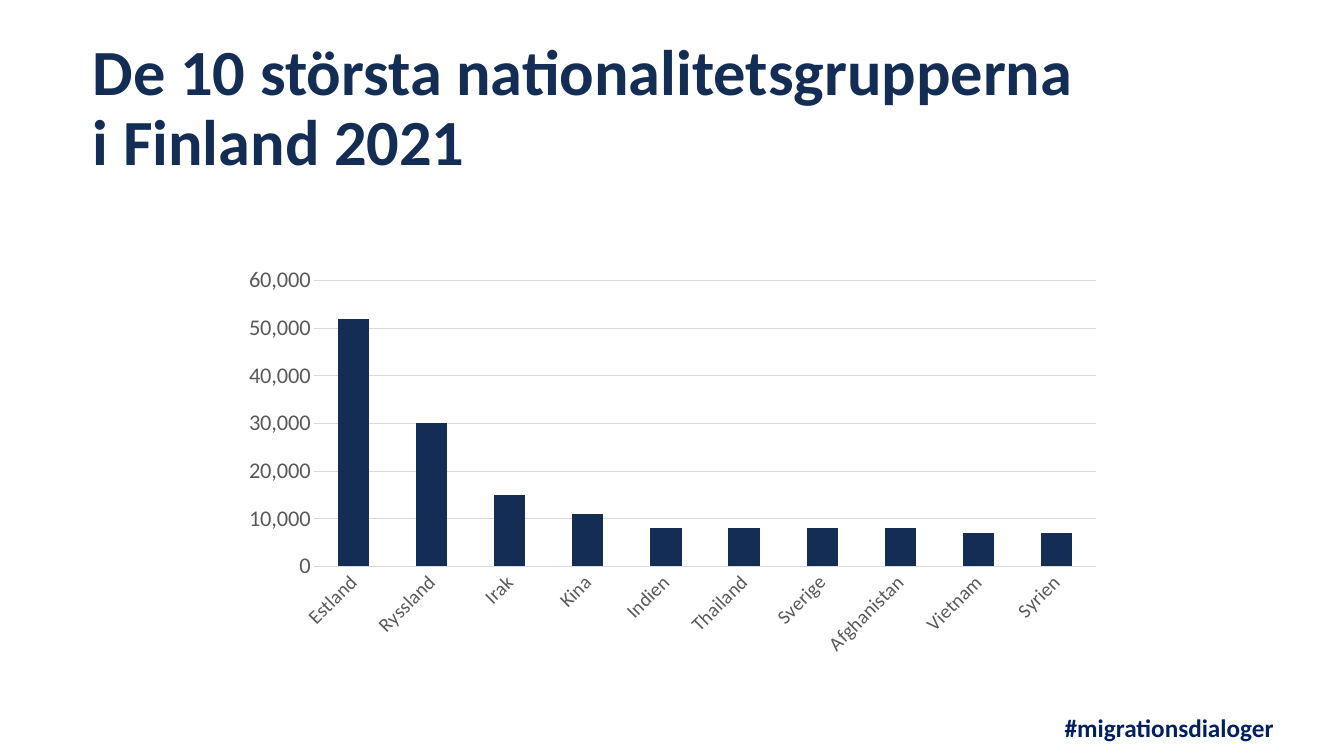
"""Build a slide with a column chart of the largest nationality groups in Finland."""
from lxml import etree
from pptx import Presentation
from pptx.chart.data import CategoryChartData
from pptx.dml.color import RGBColor
from pptx.enum import chart as chart_enum, text as text_enum
from pptx.oxml.ns import qn
from pptx.util import Inches, Pt

TITLE = "De 10 största nationalitetsgrupperna\vi Finland 2021"
HASHTAG = "#migrationsdialoger"
GROUPS = {
    "Estland": 52000,
    "Ryssland": 30000,
    "Irak": 15000,
    "Kina": 11000,
    "Indien": 8000,
    "Thailand": 8000,
    "Sverige": 8000,
    "Afghanistan": 8000,
    "Vietnam": 7000,
    "Syrien": 7000,
}
COLORS = {"navy": "142D55", "hashtag": "002060", "label": "595959", "grid": "D9D9D9", "black": "000000"}
FONT = "Calibri"
LEFT, WIDTH = 0.92, 10.47
PLOT = {"x": 0.21, "y": 0.11, "w": 0.74, "h": 0.66}


def color(name):
    return RGBColor.from_string(COLORS[name])


def style_font(font, size, color_name, bold=False):
    font.name = FONT
    font.size = Pt(size)
    font.bold = bold
    font.color.rgb = color(color_name)


def place(shape, left, top, width, height):
    shape.left, shape.top = Inches(left), Inches(top)
    shape.width, shape.height = Inches(width), Inches(height)


def write(shape, content, size, color_name, spacing, anchor, bold=True):
    frame = shape.text_frame
    frame.word_wrap = True
    frame.auto_size = text_enum.MSO_AUTO_SIZE.NONE
    frame.vertical_anchor = anchor
    frame.margin_left = frame.margin_right = frame.margin_top = frame.margin_bottom = 0
    paragraph = frame.paragraphs[0]
    paragraph.text = content
    paragraph.alignment = text_enum.PP_ALIGN.LEFT
    paragraph.line_spacing = spacing
    for run in paragraph.runs:
        style_font(run.font, size, color_name, bold)


def style_line(line):
    line.color.rgb = color("grid")
    line.width = Pt(0.75)


def set_plot_layout(chart):
    plot_area = chart.plots[0]._element.getparent()
    for old_layout in plot_area.findall(qn("c:layout")):
        plot_area.remove(old_layout)
    layout = etree.Element(qn("c:layout"))
    manual = etree.SubElement(layout, qn("c:manualLayout"))
    settings = {"layoutTarget": "inner", "xMode": "edge", "yMode": "edge", **PLOT}
    for tag, value in settings.items():
        etree.SubElement(manual, qn(f"c:{tag}")).set("val", str(value))
    plot_area.insert(0, layout)


def add_group_chart(slide):
    data = CategoryChartData(number_format="#,##0")
    data.categories = list(GROUPS)
    data.add_series("Series 1", list(GROUPS.values()))
    frame = slide.shapes.add_chart(
        chart_enum.XL_CHART_TYPE.COLUMN_CLUSTERED,
        Inches(LEFT), Inches(2.31), Inches(WIDTH), Inches(4.3), data,
    )
    chart = frame.chart
    chart.has_title = False
    chart.has_legend = False
    style_font(chart.font, 10, "black")

    plot = chart.plots[0]
    plot.vary_by_categories = False
    plot.gap_width = 150
    fill = plot.series[0].format.fill
    fill.solid()
    fill.fore_color.rgb = color("navy")

    for axis, size in ((chart.category_axis, 14), (chart.value_axis, 16)):
        axis.major_tick_mark = axis.minor_tick_mark = chart_enum.XL_TICK_MARK.NONE
        style_font(axis.tick_labels.font, size, "label")
    style_line(chart.category_axis.format.line)
    label_body = chart.category_axis._element.find(qn("c:txPr")).find(qn("a:bodyPr"))
    label_body.set("rot", "-2700000")
    label_body.set("vert", "horz")

    values = chart.value_axis
    values.minimum_scale, values.maximum_scale, values.major_unit = 0, 60000, 10000
    values.tick_labels.number_format = "#,##0"
    values.tick_labels.number_format_is_linked = False
    values.format.line.fill.background()
    values.has_major_gridlines = True
    style_line(values.major_gridlines.format.line)
    set_plot_layout(chart)


def main():
    presentation = Presentation()
    presentation.slide_width, presentation.slide_height = Inches(13.33), Inches(7.5)
    slide = presentation.slides.add_slide(presentation.slide_layouts[5])

    title = slide.shapes.title
    place(title, LEFT, 0.42, WIDTH, 1.36)
    write(title, TITLE, 46, "navy", 0.9, text_enum.MSO_ANCHOR.BOTTOM)

    add_group_chart(slide)

    hashtag = slide.shapes.add_textbox(Inches(10.56), Inches(7.04), Inches(2.63), Inches(0.23))
    write(hashtag, HASHTAG, 18, "hashtag", 1.1, text_enum.MSO_ANCHOR.TOP)

    presentation.save("out.pptx")


if __name__ == "__main__":
    main()
